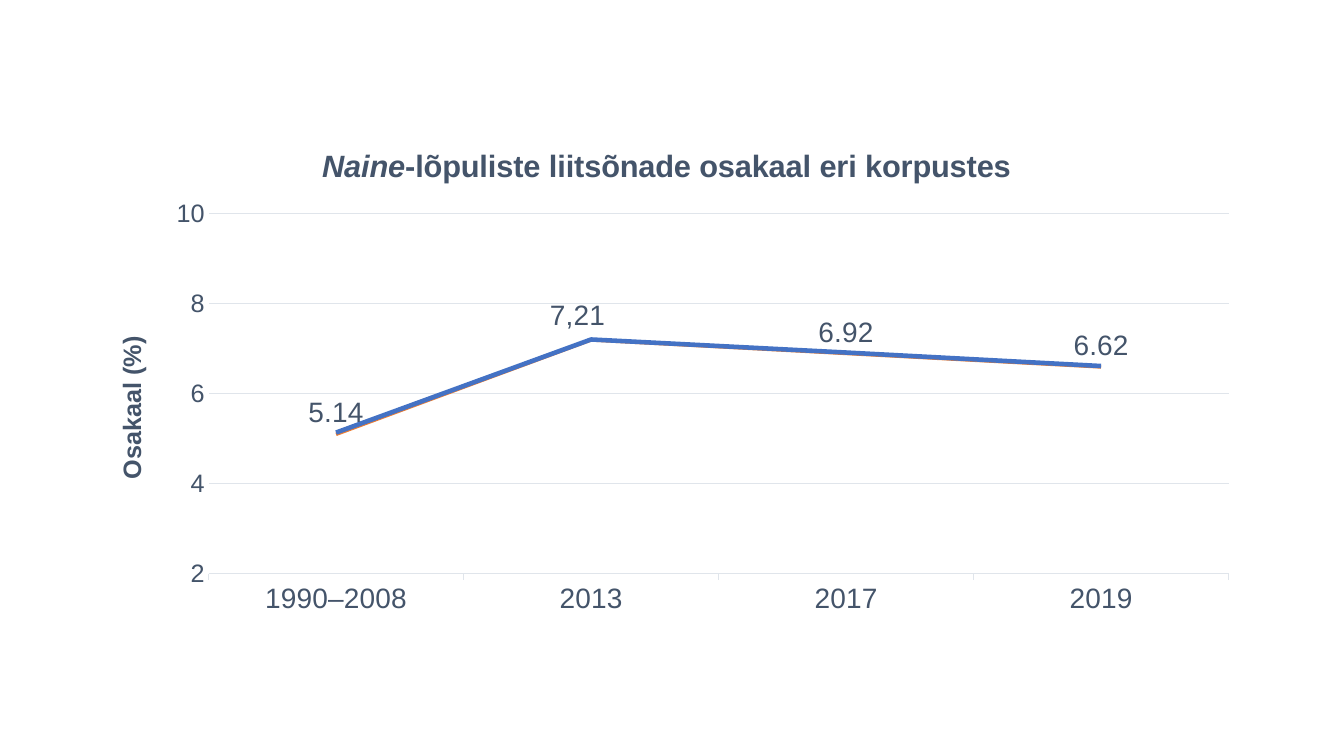
from lxml import etree
from pptx import Presentation
from pptx.chart.data import CategoryChartData
from pptx.dml.color import RGBColor
from pptx.enum.chart import XL_CHART_TYPE, XL_LABEL_POSITION, XL_MARKER_STYLE, XL_TICK_MARK
from pptx.oxml.ns import qn
from pptx.util import Pt

LINE_CHART = XL_CHART_TYPE.LINE
LABEL_ABOVE = XL_LABEL_POSITION.ABOVE
NO_MARKER = XL_MARKER_STYLE.NONE
TICK_OUTSIDE = XL_TICK_MARK.OUTSIDE
TICK_NONE = XL_TICK_MARK.NONE

TEXT_COLOR = "44546A"
GRID_COLOR = "E0E5EB"
CATEGORIES = ["1990–2008", "2013", "2017", "2019"]
SERIES = [
    ("Series 1", [5.1, 7.2, 6.9, 6.6], "ED7D31", 2.5),
    ("Series 2", [5.14, 7.21, 6.92, 6.62], "4472C4", 3.25),
]


def color(hex_string):
    return RGBColor.from_string(hex_string)


def style_font(font, size, bold=False):
    font.name = "Arial"
    font.size = Pt(size)
    font.bold = bold
    font.color.rgb = color(TEXT_COLOR)


def style_line(line, hex_string, width):
    line.color.rgb = color(hex_string)
    line.width = Pt(width)


def set_layout(parent, index, box, modes, **lengths):
    layout = parent.find(qn("c:layout"))
    if layout is None:
        layout = etree.Element(qn("c:layout"))
        parent.insert(index, layout)
    manual = etree.SubElement(layout, qn("c:manualLayout"))
    for name, value in modes.items():
        etree.SubElement(manual, qn(f"c:{name}"), val=value)
    width, height = box
    for name, length in lengths.items():
        extent = width if name in ("x", "w") else height
        etree.SubElement(manual, qn(f"c:{name}"), val=str(length / extent))


def set_title(title, runs, size, box, left, top):
    paragraph = title.text_frame.paragraphs[0]
    style_font(paragraph.font, size, bold=True)
    for text, italic in runs:
        run = paragraph.add_run()
        run.text = text
        run.font.italic = italic
    set_layout(title._element, 1, box, {"xMode": "edge", "yMode": "edge"}, x=left, y=top)


def style_axes(chart, box):
    categories = chart.category_axis
    style_font(categories.tick_labels.font, 20)
    style_line(categories.format.line, GRID_COLOR, 0.75)
    categories.major_tick_mark = TICK_OUTSIDE

    values = chart.value_axis
    style_font(values.tick_labels.font, 18)
    values.minimum_scale, values.maximum_scale, values.major_unit = 2, 10, 2
    values.major_tick_mark = TICK_NONE
    values.format.line.fill.background()
    style_line(values.major_gridlines.format.line, GRID_COLOR, 0.75)
    set_title(values.axis_title, [("Osakaal (%)", False)], 18, box, 13, 143.5)


def add_labels(series, box):
    labels = series.data_labels
    labels.show_value = True
    labels.position = LABEL_ABOVE
    style_font(labels.font, 20)

    peak_label = series.points[1].data_label
    peak_paragraph = peak_label.text_frame.paragraphs[0]
    peak_paragraph.add_run().text = "7,21"
    style_font(peak_paragraph.font, 20)
    peak_label.position = LABEL_ABOVE
    label_element = labels._element.find(qn("c:dLbl"))
    set_layout(label_element, 1, box, {}, x=-9.7, y=-2.4)


def add_share_chart(slide, left, top, width, height):
    box = (width, height)
    data = CategoryChartData()
    data.categories = CATEGORIES
    for name, values, _, _ in SERIES:
        data.add_series(name, values)
    chart = slide.shapes.add_chart(
        LINE_CHART, Pt(left), Pt(top), Pt(width), Pt(height), data
    ).chart
    style_font(chart.font, 18)
    chart.has_legend = False
    plot = chart.plots[0]
    plot.vary_by_categories = False
    title_runs = [("Naine", True), ("-lõpuliste liitsõnade osakaal eri korpustes", False)]
    set_title(chart.chart_title, title_runs, 22, box, 162, 10.5)
    style_axes(chart, box)
    for series, (_, _, line_color, line_width) in zip(plot.series, SERIES):
        series.smooth = False
        series.marker.style = NO_MARKER
        style_line(series.format.line, line_color, line_width)
    add_labels(plot.series[1], box)
    modes = {"layoutTarget": "inner", "xMode": "edge", "yMode": "edge"}
    plot_area = chart._chartSpace.chart.plotArea
    set_layout(plot_area, 0, box, modes, x=83, y=59.4, w=728.6, h=257.1)


def main():
    presentation = Presentation()
    presentation.slide_width = Pt(960)
    presentation.slide_height = Pt(540)
    slide = presentation.slides.add_slide(presentation.slide_layouts[6])
    add_share_chart(slide, 66, 93.5, 828, 353.5)
    presentation.save("out.pptx")


if __name__ == "__main__":
    main()
